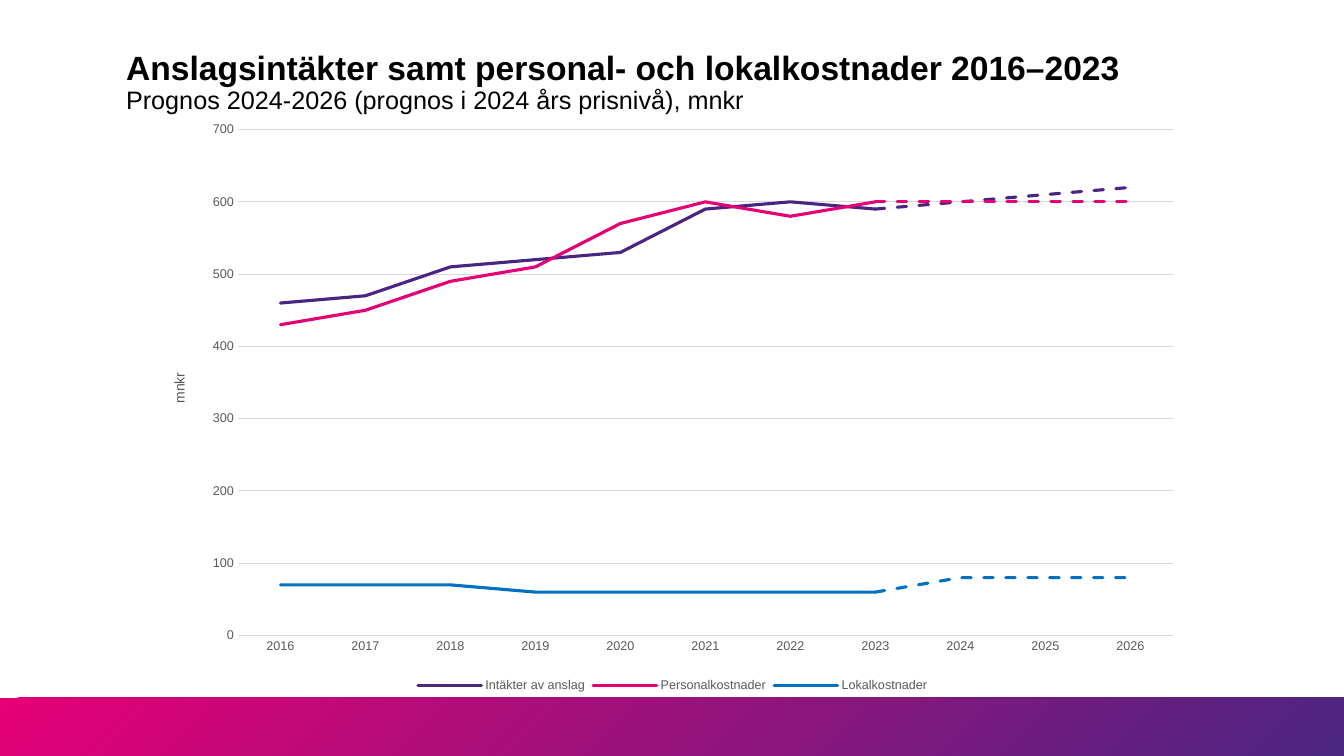
from lxml import etree
from pptx import Presentation
from pptx.chart.data import CategoryChartData
from pptx.dml.color import RGBColor
from pptx.enum.chart import XL_CHART_TYPE, XL_LEGEND_POSITION, XL_TICK_MARK
from pptx.enum.dml import MSO_LINE
from pptx.enum.shapes import MSO_SHAPE
from pptx.enum.text import MSO_ANCHOR, MSO_AUTO_SIZE, PP_ALIGN
from pptx.oxml import parse_xml
from pptx.oxml.ns import nsdecls, qn
from pptx.util import Inches, Pt


def rgb(color):
    return RGBColor.from_string(color)


def set_font(font, color="595959", **fmt):
    for name, value in {"name": "Arial", "size": Pt(9), "bold": False, **fmt}.items():
        setattr(font, name, value)
    font.color.rgb = rgb(color)


prs = Presentation()
prs.slide_width, prs.slide_height = Inches(13.33), Inches(7.5)
s = prs.slides.add_slide(prs.slide_layouts[5])

band = s.shapes.add_shape(MSO_SHAPE.RECTANGLE, 0, Inches(6.92), Inches(13.33), Inches(0.58))
band.shadow.inherit = False
band.line.fill.background()
band.fill.gradient()
band.fill.gradient_angle = 315
for stop, color in zip(band.fill.gradient_stops, ["E50076", "4B2582"]):
    stop.color.rgb = rgb(color)

title = s.shapes.title
title.left, title.top = Inches(1.15), Inches(0.59)
title.width, title.height = Inches(10.43), Inches(0.6)
tf = title.text_frame
for name, value in {"word_wrap": True, "auto_size": MSO_AUTO_SIZE.NONE,
                    "vertical_anchor": MSO_ANCHOR.BOTTOM}.items():
    setattr(tf, name, value)
p = tf.paragraphs[0]
p.alignment, p.line_spacing = PP_ALIGN.LEFT, 0.9
r = p.add_run()
r.text = "Anslagsintäkter samt personal- och lokalkostnader 2016–2023"
set_font(r.font, "000000", size=Pt(24), bold=True)
p.add_line_break()
r = p.add_run()
r.text = "Prognos 2024-2026 (prognos i 2024 års prisnivå), mnkr"
set_font(r.font, "000000", size=Pt(18))

colors = ["4B2582", "E50075", "0071C2"]
outcomes = {
    "Intäkter av anslag": [460, 470, 510, 520, 530, 590, 600, 590],
    "Personalkostnader": [430, 450, 490, 510, 570, 600, 580, 600],
    "Lokalkostnader": [70, 70, 70, 60, 60, 60, 60, 60],
}
forecasts = {
    "Series 4": [600, 610, 620],
    "Series 5": [600, 600, 600],
    "Series 6": [80, 80, 80],
}
data = CategoryChartData()
data.categories = [str(year) for year in range(2016, 2027)]
for name, values in outcomes.items():
    data.add_series(name, values + [None] * 3)
for (name, values), outcome in zip(forecasts.items(), outcomes.values()):
    data.add_series(name, [None] * 7 + outcome[-1:] + values)

chart = s.shapes.add_chart(XL_CHART_TYPE.LINE, Inches(1.49), Inches(1.1),
                           Inches(10.36), Inches(5.81), data).chart
set_font(chart.font, "000000", size=Pt(10))
chart.has_title = False
plot = chart.plots[0]
plot.vary_by_categories = False
for i, series in enumerate(plot.series):
    series.smooth = False
    line = series.format.line
    line.width = Pt(2.25)
    line.color.rgb = rgb(colors[i % 3])
    if i >= 3:
        line.dash_style = MSO_LINE.DASH
    series._element.find(qn("c:spPr")).find(qn("a:ln")).set("cap", "rnd")

cat_axis, val_axis = chart.category_axis, chart.value_axis
for axis in (cat_axis, val_axis):
    axis.major_tick_mark = axis.minor_tick_mark = XL_TICK_MARK.NONE
    set_font(axis.tick_labels.font)
val_axis.minimum_scale, val_axis.maximum_scale, val_axis.major_unit = 0, 700, 100
val_axis.format.line.fill.background()
for line in (cat_axis.format.line, val_axis.major_gridlines.format.line):
    line.width = Pt(0.75)
    line.color.rgb = rgb("D9D9D9")
p = val_axis.axis_title.text_frame.paragraphs[0]
r = p.add_run()
r.text = "mnkr"
set_font(r.font, size=Pt(10))

chart.has_legend = True
legend = chart.legend
legend.position = XL_LEGEND_POSITION.BOTTOM
legend.include_in_layout = False
set_font(legend.font)
legend_pos = legend._element.find(qn("c:legendPos"))
for i in (5, 4, 3):
    legend_pos.addnext(parse_xml(
        f'<c:legendEntry {nsdecls("c")}><c:idx val="{i}"/><c:delete val="1"/></c:legendEntry>'))

plot_area = chart._chartSpace.chart.plotArea
for old in plot_area.findall(qn("c:layout")):
    plot_area.remove(old)
layout = etree.Element(qn("c:layout"))
manual = etree.SubElement(layout, qn("c:manualLayout"))
for tag, value in {"layoutTarget": "inner", "xMode": "edge", "yMode": "edge",
                   "x": 0.084, "y": 0.032, "w": 0.895, "h": 0.864}.items():
    etree.SubElement(manual, qn(f"c:{tag}")).set("val", str(value))
plot_area.insert(0, layout)

prs.save("out.pptx")
